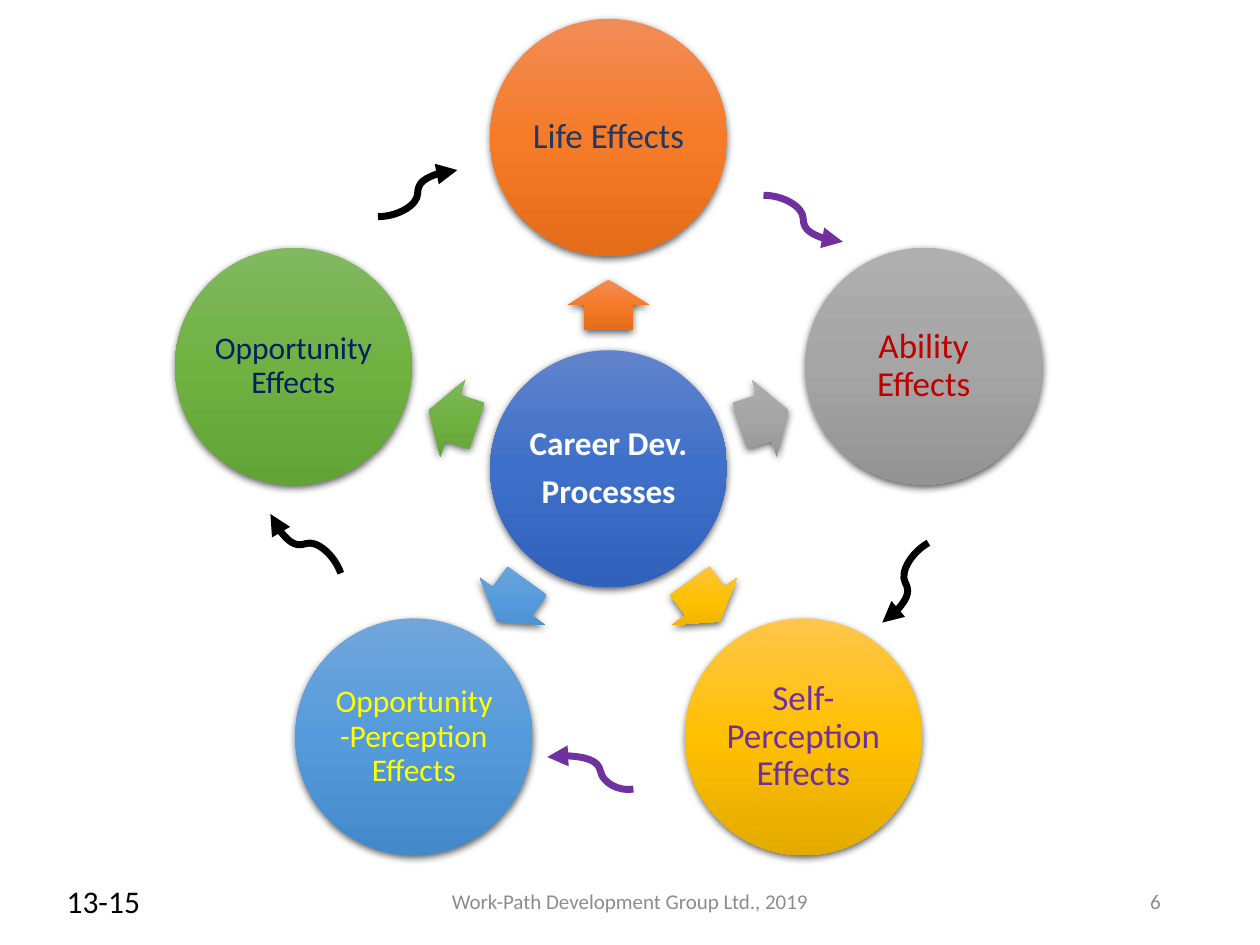
from math import cos, radians, sin

from pptx import Presentation
from pptx.dml.color import RGBColor
from pptx.enum.shapes import MSO_CONNECTOR, MSO_SHAPE
from pptx.enum.text import MSO_ANCHOR, PP_ALIGN
from pptx.oxml import parse_xml
from pptx.oxml.ns import nsdecls, qn
from pptx.util import Inches, Pt

COLUMNS, ROWS = 100, 75
SLIDE_WIDTH, SLIDE_HEIGHT = Inches(10), Inches(7.5)
HUB_COLUMN, HUB_ROW = 48.3, 37.2
CIRCLE_SIZE = 18.8
CIRCLE_ORBIT, ARROW_ORBIT = 26.3, 13
ARROW_LENGTH, ARROW_BREADTH = 4, 6.4
CURVE_WIDTH, CURVE_HEIGHT = 6.3, 3.7

BLACK = RGBColor(0x00, 0x00, 0x00)
WHITE = RGBColor(0xFF, 0xFF, 0xFF)
GREY = RGBColor(0x8C, 0x8C, 0x8C)
NAVY = RGBColor(0x20, 0x38, 0x64)
DARK_BLUE = RGBColor(0x00, 0x20, 0x60)
RED = RGBColor(0xC0, 0x00, 0x00)
PURPLE = RGBColor(0x70, 0x30, 0xA0)
YELLOW = RGBColor(0xFF, 0xFF, 0x00)


def shades(*codes):
    return [RGBColor.from_string(code) for code in codes]


BLUE_SHADES = shades("6183CB", "3E70CA", "3062BB")
EFFECTS = [
    ("Life Effects", 20, NAVY, shades("F18C57", "F67B28", "E56C19")),
    ("Ability Effects", 20, RED, shades("AFAFAF", "A5A5A5", "939393")),
    ("Self-Perception Effects", 20, PURPLE, shades("FFC64B", "FFC000", "E3AB00")),
    ("Opportunity-Perception Effects", 18, YELLOW, shades("71A6DB", "559BDB", "448ACA")),
    ("Opportunity Effects", 18, DARK_BLUE, shades("81B861", "6FB242", "62A336")),
]
CURVES = [
    (33.15, 15.35, 0, True, BLACK, 0.5),
    (63.75, 17.35, 0, False, PURPLE, 0.5),
    (71.85, 46.25, 150.5, True, BLACK, 0.5),
    (46.85, 61.35, 170, False, PURPLE, 0.37),
    (24.25, 43.15, 250.5, True, BLACK, 0.5),
]


def across(columns):
    return round(SLIDE_WIDTH * columns / COLUMNS)


def down(rows):
    return round(SLIDE_HEIGHT * rows / ROWS)


def box(left, top, width, height):
    return across(left), down(top), across(width), down(height)


def centred_box(column, row, width, height):
    return box(column - width / 2, row - height / 2, width, height)


def around_hub(distance, angle):
    return (HUB_COLUMN + distance * cos(radians(angle)),
            HUB_ROW + distance * sin(radians(angle)))


def write(frame, text, size=12, color=BLACK, bold=False, align=PP_ALIGN.LEFT,
          anchor=MSO_ANCHOR.MIDDLE, wrap=True, inset=None, line_spacing=None, after=0):
    frame.word_wrap = wrap
    frame.vertical_anchor = anchor
    if inset is not None:
        frame.margin_left = frame.margin_right = across(inset)
        frame.margin_top = frame.margin_bottom = down(inset)
    for index, line in enumerate(text.split("\n")):
        paragraph = frame.add_paragraph() if index else frame.paragraphs[0]
        paragraph.alignment = align
        paragraph.line_spacing = line_spacing
        paragraph.space_after = Pt(size * after)
        run = paragraph.add_run()
        run.text = line
        run.font.name = "Calibri"
        run.font.size = Pt(size)
        run.font.bold = bold
        run.font.color.rgb = color


def add_label(slide, place, text, **style):
    write(slide.shapes.add_textbox(*box(*place)).text_frame, text, **style)


def add_glossy_shape(slide, kind, place, colors):
    shape = slide.shapes.add_shape(kind, *place)
    shape.line.fill.background()
    stops = "".join(f'<a:gs pos="{index * 50000}"><a:srgbClr val="{color}"/></a:gs>'
                    for index, color in enumerate(colors))
    properties = shape._element.spPr
    properties.find(qn("a:prstGeom")).addnext(parse_xml(
        f'<a:gradFill {nsdecls("a")} rotWithShape="0"><a:gsLst>{stops}</a:gsLst>'
        '<a:lin ang="5400000" scaled="0"/></a:gradFill>'))
    properties.append(parse_xml(
        f'<a:effectLst {nsdecls("a")}><a:outerShdw blurRad="57150" dist="19050" '
        'dir="5400000" algn="ctr" rotWithShape="0"><a:srgbClr val="000000">'
        '<a:alpha val="63000"/></a:srgbClr></a:outerShdw></a:effectLst>'))
    return shape


def add_circle(slide, column, row, colors, text, **style):
    place = centred_box(column, row, CIRCLE_SIZE, CIRCLE_SIZE)
    circle = add_glossy_shape(slide, MSO_SHAPE.OVAL, place, colors)
    write(circle.text_frame, text, align=PP_ALIGN.CENTER, inset=0.3,
          line_spacing=0.9, after=0.35, **style)


def add_spoke_arrow(slide, angle, colors):
    place = centred_box(*around_hub(ARROW_ORBIT, angle), ARROW_LENGTH, ARROW_BREADTH)
    arrow = add_glossy_shape(slide, MSO_SHAPE.RIGHT_ARROW, place, colors)
    arrow.adjustments[0] = 0.6
    arrow.adjustments[1] = 0.5
    arrow.rotation = angle % 360


def add_curve(slide, column, row, rotation, rising, color, bend):
    left, right = column - CURVE_WIDTH / 2, column + CURVE_WIDTH / 2
    start, end = row - CURVE_HEIGHT / 2, row + CURVE_HEIGHT / 2
    if rising:
        start, end = end, start
    curve = slide.shapes.add_connector(MSO_CONNECTOR.CURVE, across(left), down(start),
                                       across(right), down(end))
    curve.line.color.rgb = color
    curve.line.width = Pt(4)
    properties = curve._element.spPr
    properties.find(qn("a:xfrm")).set("rot", str(round(rotation * 60000)))
    geometry = properties.find(qn("a:prstGeom"))
    for values in geometry.findall(qn("a:avLst")):
        geometry.remove(values)
    geometry.append(parse_xml(
        f'<a:avLst {nsdecls("a")}><a:gd name="adj1" fmla="val {round(bend * 100000)}"/></a:avLst>'))
    properties.find(qn("a:ln")).append(parse_xml(f'<a:tailEnd {nsdecls("a")} type="triangle"/>'))
    properties.append(parse_xml(f'<a:effectLst {nsdecls("a")}/>'))


def main():
    presentation = Presentation()
    presentation.slide_width, presentation.slide_height = SLIDE_WIDTH, SLIDE_HEIGHT
    slide = presentation.slides.add_slide(presentation.slide_layouts[6])

    add_label(slide, (33.1, 69.5, 33.8, 4), "Work-Path Development Group Ltd., 2019",
              color=GREY, align=PP_ALIGN.CENTER)
    add_label(slide, (70.6, 69.5, 22.5, 4), "6", color=GREY, align=PP_ALIGN.RIGHT)
    add_circle(slide, HUB_COLUMN, HUB_ROW, BLUE_SHADES, "Career Dev.\nProcesses",
               size=19, color=WHITE, bold=True)
    for index, (text, size, color, colors) in enumerate(EFFECTS):
        angle = index * 360 / len(EFFECTS) - 90
        add_spoke_arrow(slide, angle, colors)
        add_circle(slide, *around_hub(CIRCLE_ORBIT, angle), colors, text,
                   size=size, color=color)
    for curve in CURVES:
        add_curve(slide, *curve)
    add_label(slide, (4.3, 69.5, 7.9, 4), "13-15", size=18, anchor=MSO_ANCHOR.TOP, wrap=False)

    presentation.save("out.pptx")


if __name__ == "__main__":
    main()
